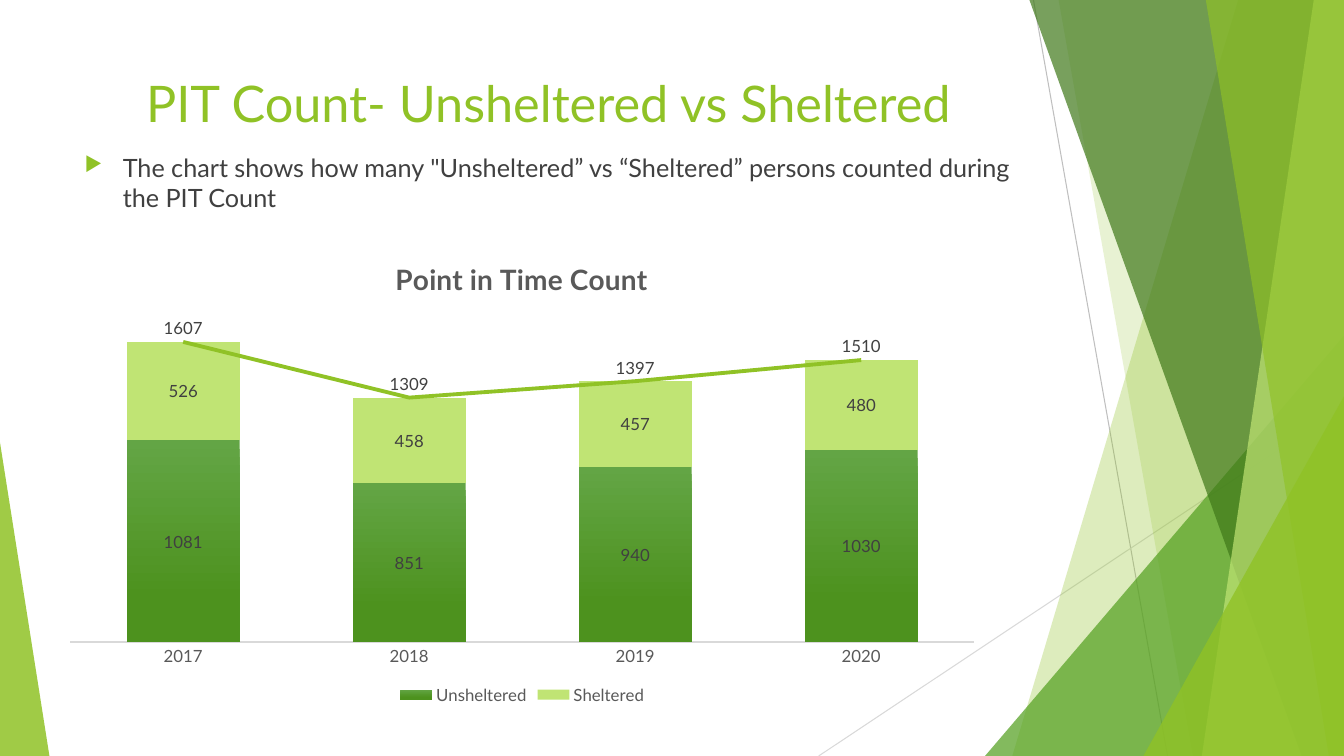
from copy import deepcopy

from pptx import Presentation
from pptx.chart.data import CategoryChartData
from pptx.dml.color import RGBColor
from pptx.enum.chart import (XL_CHART_TYPE, XL_LABEL_POSITION as LabelPos,
                             XL_LEGEND_POSITION, XL_MARKER_STYLE, XL_TICK_MARK)
from pptx.enum.shapes import MSO_CONNECTOR, MSO_SHAPE
from pptx.enum.text import MSO_ANCHOR, PP_ALIGN
from pptx.oxml import parse_xml
from pptx.oxml.ns import nsdecls, qn
from pptx.util import Inches, Pt

LIME = RGBColor(0x90, 0xC2, 0x26)
PALE_LIME = RGBColor(0xC0, 0xE4, 0x74)
GREEN = RGBColor(0x54, 0xA0, 0x21)
DARK_GREEN = RGBColor(0x3F, 0x78, 0x19)
COLUMN_TOP = RGBColor(0x63, 0xA5, 0x45)
COLUMN_FOOT = RGBColor(0x4D, 0x92, 0x1E)
TEXT = RGBColor(0x40, 0x40, 0x40)
MUTED = RGBColor(0x59, 0x59, 0x59)
SILVER = RGBColor(0xBF, 0xBF, 0xBF)
LIGHT = RGBColor(0xD9, 0xD9, 0xD9)
FONT = "Lato"
WIDTH, HEIGHT = 13.33, 7.5


def style_font(font, size, color, bold=False):
    font.name, font.size, font.bold = FONT, Pt(size), bold
    font.color.rgb = color


def tint(shape, color, opacity):
    shape.shadow.inherit = False
    shape.line.fill.background()
    shape.fill.solid()
    shape.fill.fore_color.rgb = color
    rgb = shape._element.spPr.find(qn("a:solidFill"))[0]
    rgb.append(parse_xml(f'<a:alpha {nsdecls("a")} val="{opacity * 1000}"/>'))


def add_ray(slide, start, end, color):
    ray = slide.shapes.add_connector(
        MSO_CONNECTOR.STRAIGHT, *map(Inches, start + end))
    ray.line.color.rgb = color
    ray.line.width = Pt(0.75)
    ray._element.spPr.append(parse_xml(f'<a:effectLst {nsdecls("a")}/>'))


def add_band(slide, top_left, bottom_left, color, opacity):
    outline = slide.shapes.build_freeform(
        Inches(top_left), 0, scale=1.0)
    corners = [(WIDTH, 0), (WIDTH, HEIGHT), (bottom_left, HEIGHT)]
    outline.add_line_segments([(Inches(x), Inches(y)) for x, y in corners])
    tint(outline.convert_to_shape(), color, opacity)


def add_wedge(slide, left, top, width, apex, color, opacity):
    wedge = slide.shapes.add_shape(
        MSO_SHAPE.ISOSCELES_TRIANGLE, Inches(left), Inches(top),
        Inches(width), Inches(HEIGHT - top))
    wedge.adjustments[0] = apex
    tint(wedge, color, opacity)


def add_facets(slide):
    add_ray(slide, (10.25, 0), (11.58, HEIGHT), SILVER)
    add_ray(slide, (WIDTH, 4.03), (8.12, HEIGHT), LIGHT)
    add_band(slide, 12.28, 10.04, LIME, 30)
    add_band(slide, 10.5, 11.83, LIME, 20)
    add_wedge(slide, 9.77, 3.33, 3.56, 1, GREEN, 72)
    add_band(slide, 10.21, 12.91, DARK_GREEN, 70)
    add_band(slide, 13.03, 11.92, PALE_LIME, 70)
    add_band(slide, 11.96, 13.18, LIME, 65)
    add_wedge(slide, 11.34, 3.93, 1.99, 1, LIME, 80)
    add_wedge(slide, 0, 4.39, 0.49, 0, LIME, 85)


def add_text(slide, box, wording):
    frame = slide.shapes.add_textbox(*map(Inches, box)).text_frame
    frame.word_wrap = True
    frame.vertical_anchor = MSO_ANCHOR.TOP
    frame.text = wording
    return frame.paragraphs[0]


def add_heading(slide, box):
    heading = add_text(slide, box, "PIT Count- Unsheltered vs Sheltered")
    heading.alignment = PP_ALIGN.CENTER
    style_font(heading.runs[0].font, 36, LIME)


def add_summary(slide, box):
    summary = add_text(
        slide, box, 'The chart shows how many "Unsheltered” vs “Sheltered” '
        "persons counted during the PIT Count")
    properties = summary._p.get_or_add_pPr()
    properties.set("marL", str(Inches(0.38)))
    properties.set("indent", str(-Inches(0.38)))
    for bullet in (f'<a:buClr {nsdecls("a")}><a:srgbClr val="{LIME}"/></a:buClr>',
                   f'<a:buSzPct {nsdecls("a")} val="80000"/>',
                   f'<a:buChar {nsdecls("a")} char="▶"/>'):
        properties.append(parse_xml(bullet))
    style_font(summary.runs[0].font, 18, TEXT)


def set_layout(parent, index, **fractions):
    for previous in parent.findall(qn("c:layout")):
        parent.remove(previous)
    target = '<c:layoutTarget val="inner"/>' if "w" in fractions else ""
    modes = "".join(f'<c:{key}Mode val="edge"/>' for key in "xy")
    sizes = "".join(f'<c:{key} val="{part}"/>' for key, part in fractions.items())
    parent.insert(index, parse_xml(
        f'<c:layout {nsdecls("c")}><c:manualLayout>{target}{modes}{sizes}'
        "</c:manualLayout></c:layout>"))


def move_total_to_line(chart):
    columns = chart.plots[0]._element
    total = columns.findall(qn("c:ser"))[-1]
    for flag in total.findall(qn("c:invertIfNegative")):
        total.remove(flag)
    line_plot = parse_xml(
        f'<c:lineChart {nsdecls("c")}><c:grouping val="standard"/>'
        '<c:varyColors val="0"/><c:marker val="1"/></c:lineChart>')
    line_plot.insert(2, total)
    for axis_id in columns.findall(qn("c:axId")):
        line_plot.append(deepcopy(axis_id))
    columns.addnext(line_plot)
    return chart.plots[1].series[0]


def label_values(series, position):
    labels = series.data_labels
    labels.show_value = True
    labels.position = position
    style_font(labels.font, 12, TEXT)


def add_count_chart(slide, box):
    counts = CategoryChartData()
    counts.categories = ["2017", "2018", "2019", "2020"]
    counts.add_series("Unsheltered", (1081, 851, 940, 1030))
    counts.add_series("Sheltered", (526, 458, 457, 480))
    counts.add_series("Series 3", (1607, 1309, 1397, 1510))
    chart = slide.shapes.add_chart(
        XL_CHART_TYPE.COLUMN_STACKED, *map(Inches, box), counts).chart
    chart.font.name, chart.font.size = FONT, Pt(10)

    chart.has_title = True
    title = chart.chart_title
    title.text_frame.text = "Point in Time Count"
    style_font(title.text_frame.paragraphs[0].runs[0].font, 20, MUTED, True)
    title.include_in_layout = False
    set_layout(title._element, 1, x=0.36, y=0.04)

    total = move_total_to_line(chart)
    columns = chart.plots[0]
    set_layout(columns._element.getparent(), 0, x=0.02, y=0.15, w=0.96, h=0.71)
    columns.gap_width, columns.overlap = 100, 100
    columns.vary_by_categories = False
    unsheltered, sheltered = columns.series
    gradient = unsheltered.format.fill
    gradient.gradient()
    gradient.gradient_angle = 270
    for stop, color, position in zip(
            gradient.gradient_stops, (COLUMN_TOP, COLUMN_FOOT), (0, 0.78)):
        stop.color.rgb, stop.position = color, position
    sheltered.format.fill.solid()
    sheltered.format.fill.fore_color.rgb = PALE_LIME
    total.smooth = False
    total.marker.style = XL_MARKER_STYLE.NONE
    total.format.line.color.rgb = LIME
    total.format.line.width = Pt(2.75)
    for series, position in ((unsheltered, LabelPos.CENTER),
                             (sheltered, LabelPos.CENTER), (total, LabelPos.ABOVE)):
        label_values(series, position)

    years, persons = chart.category_axis, chart.value_axis
    years.major_tick_mark = XL_TICK_MARK.NONE
    years.format.line.color.rgb = LIGHT
    years.format.line.width = Pt(1)
    style_font(years.tick_labels.font, 12, MUTED)
    persons.has_major_gridlines = False
    persons.minimum_scale, persons.maximum_scale = 0, 1800
    persons.visible = False

    chart.has_legend = True
    legend = chart.legend
    legend.position = XL_LEGEND_POSITION.BOTTOM
    legend.include_in_layout = False
    style_font(legend.font, 12, MUTED)
    legend._element.find(qn("c:legendPos")).addnext(parse_xml(
        f'<c:legendEntry {nsdecls("c")}><c:idx val="2"/><c:delete val="1"/>'
        "</c:legendEntry>"))


def main():
    deck = Presentation()
    deck.slide_width, deck.slide_height = Inches(WIDTH), Inches(HEIGHT)
    slide = deck.slides.add_slide(deck.slide_layouts[6])
    add_facets(slide)
    add_heading(slide, (0.74, 0.67, 9.4, 1.44))
    add_summary(slide, (0.74, 1.46, 9.4, 0.96))
    add_count_chart(slide, (0.51, 2.33, 9.34, 4.7))
    deck.save("out.pptx")


if __name__ == "__main__":
    main()
